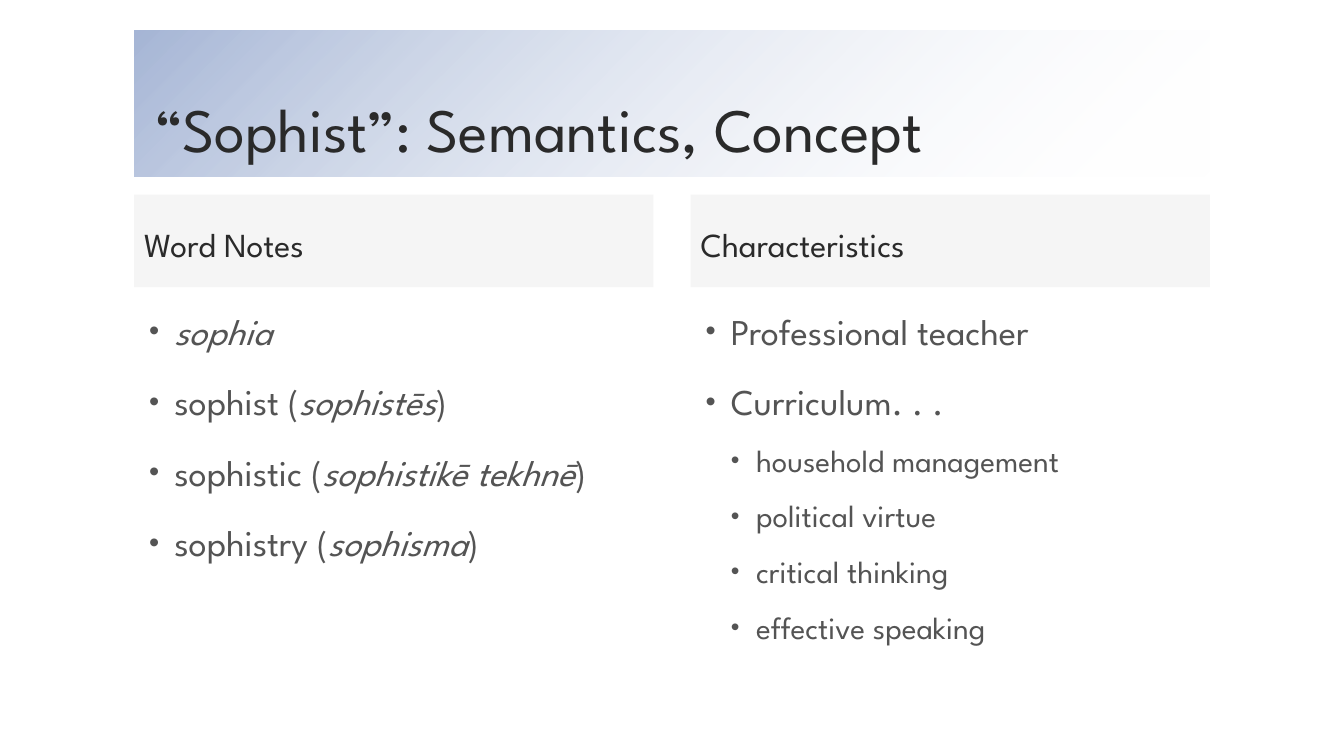
from lxml import etree
from pptx import Presentation, util as u
from pptx.dml.color import RGBColor
from pptx.enum import shapes, text
from pptx.oxml.ns import qn

TITLE = "“Sophist”: Semantics, Concept"
COLS = [
    ("Word Notes", [
        (0, "*sophia*"),
        (0, "sophist (*sophistēs*)"),
        (0, "sophistic (*sophistikē tekhnē*)"),
        (0, "sophistry (*sophisma*)"),
    ]),
    ("Characteristics", [
        (0, "Professional teacher"),
        (0, "Curriculum.\u00a0.\u00a0."),
        (1, "household management"),
        (1, "political virtue"),
        (1, "critical thinking"),
        (1, "effective speaking"),
    ]),
]
HUES = {"dark": "2A2A2A", "body": "545454", "blue": "A6B6D6",
        "white": "FFFFFF", "gray": "BFBFBF"}
FONT = "League Spartan"
LEFT, WIDE, GAP = 1.33, 10.67, 0.37
COL = (WIDE - GAP) / 2
LEVELS = [{"size": 25.9, "before": 18, "indent": 0.3},
          {"size": 22.2, "before": 12, "indent": 0.55}]


def rgb(name):
    return RGBColor.from_string(HUES[name])


def apply(item, **vals):
    for key, val in vals.items():
        setattr(item, key, val)


def add(node, tag, **vals):
    return etree.SubElement(node, qn(tag), vals)


def fade(fill, share):
    for hue in fill._xPr.iter(qn("a:srgbClr")):
        if hue.get("val") in (HUES["gray"], HUES["white"]):
            add(hue, "a:alpha", val=str(share * 1000))


def write(para, words, size, hue, space):
    apply(para, line_spacing=space, alignment=text.PP_ALIGN.LEFT)
    for i, part in enumerate(words.split("*")):
        if part:
            run = para.add_run()
            run.text = part
            apply(run.font, name=FONT, size=u.Pt(size), italic=i % 2 == 1)
            run.font.color.rgb = rgb(hue)


def bullet(para, indent):
    props = para._p.get_or_add_pPr()
    props.set("marL", str(u.Inches(indent)))
    props.set("indent", str(u.Inches(-0.25)))
    add(add(props, "a:buClr"), "a:srgbClr", val=HUES["body"])
    add(props, "a:buSzPct", val="80000")
    add(props, "a:buFont", typeface="Arial")
    add(props, "a:buChar", char="•")


def banner(slide):
    head = slide.shapes.title
    apply(head, left=u.Inches(LEFT), top=u.Inches(0.3),
          width=u.Inches(WIDE), height=u.Inches(1.45))
    head.fill.gradient()
    head.fill.gradient_angle = 315
    for stop, hue, pos in zip(head.fill.gradient_stops, ("blue", "white"), (0, 1)):
        stop.color.rgb = rgb(hue)
        stop.position = pos
    fade(head.fill, 0)
    frame = head.text_frame
    apply(frame, word_wrap=True, auto_size=text.MSO_AUTO_SIZE.NONE,
          vertical_anchor=text.MSO_ANCHOR.BOTTOM,
          margin_left=u.Inches(0.2), margin_right=u.Inches(0.2),
          margin_top=u.Inches(0.1), margin_bottom=u.Inches(0.1))
    write(frame.paragraphs[0], TITLE, 44, "dark", 0.9)


def column(slide, left, label, items):
    bar = slide.shapes.add_shape(
        shapes.MSO_SHAPE.RECTANGLE, u.Inches(left), u.Inches(1.93),
        u.Inches(COL), u.Inches(0.92))
    bar.shadow.inherit = False
    bar.fill.solid()
    bar.fill.fore_color.rgb = rgb("gray")
    fade(bar.fill, 15)
    bar.line.fill.background()
    bar.text_frame.word_wrap = True
    bar.text_frame.vertical_anchor = text.MSO_ANCHOR.MIDDLE
    write(bar.text_frame.paragraphs[0], label, 24, "dark", 1.14)

    box = slide.shapes.add_textbox(
        u.Inches(left), u.Inches(3), u.Inches(COL), u.Inches(3.58))
    frame = box.text_frame
    frame.word_wrap = True
    for i, (level, words) in enumerate(items):
        para = frame.add_paragraph() if i else frame.paragraphs[0]
        form = LEVELS[level]
        apply(para, level=level, space_before=u.Pt(form["before"]))
        write(para, words, form["size"], "body", 1.04)
        bullet(para, form["indent"])


def main():
    deck = Presentation()
    apply(deck, slide_width=u.Inches(13.33), slide_height=u.Inches(7.5))
    slide = deck.slides.add_slide(deck.slide_layouts[5])
    banner(slide)
    for i, (label, items) in enumerate(COLS):
        column(slide, LEFT + i * (COL + GAP), label, items)
    deck.save("out.pptx")


if __name__ == "__main__":
    main()
